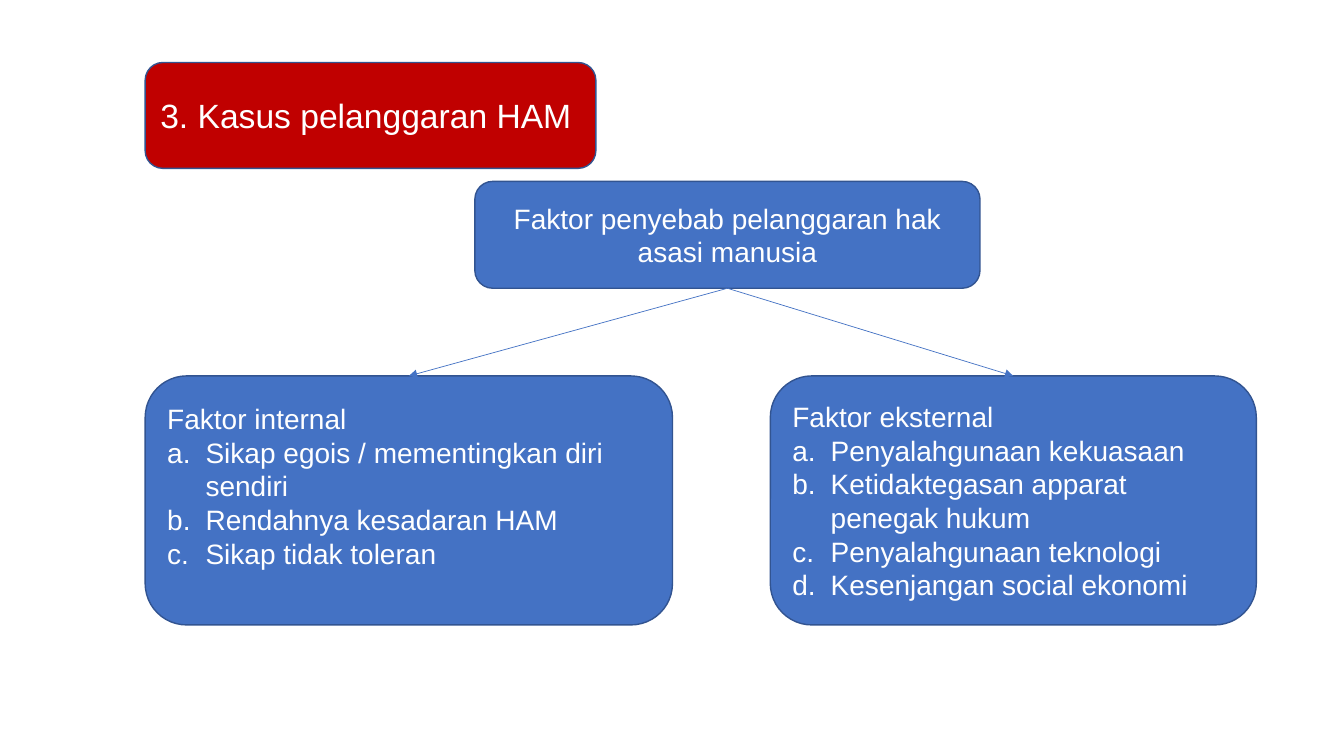
from lxml.etree import SubElement
from pptx import Presentation
from pptx.dml.color import RGBColor
from pptx.enum.shapes import MSO_CONNECTOR, MSO_SHAPE
from pptx.enum.text import MSO_ANCHOR, MSO_AUTO_SIZE, PP_ALIGN
from pptx.oxml.ns import qn
from pptx.util import Pt

PX = 9144  # EMU per px, 100 px to the inch
COLORS = {"red": "C00000", "blue": "4472C4", "edge": "325491", "text": "FFFFFF"}
FONT = "Arial"
INDENT = 38
TOP, BOTTOM = 0, 2  # connection sites of a rounded rectangle

TITLE_BOX = (144, 62, 447, 105)
HUB_BOX = (471, 180, 501, 106)
HUB_TEXT = "Faktor penyebab pelanggaran hak asasi manusia"
FACTORS = [
    # box, bottom inset, heading, lettered items
    ((144, 373, 523, 247), 34, "Faktor internal",
     ["Sikap egois / mementingkan diri sendiri",
      "Rendahnya kesadaran HAM",
      "Sikap tidak toleran"]),
    ((764, 373, 482, 247), 5, "Faktor eksternal",
     ["Penyalahgunaan kekuasaan",
      "Ketidaktegasan apparat penegak hukum",
      "Penyalahgunaan teknologi",
      "Kesenjangan social ekonomi"]),
]


def px(n):
    return int(n * PX)


def rgb(name):
    return RGBColor.from_string(COLORS[name])


def set_all(obj, fmt):
    for name, value in fmt.items():
        setattr(obj, name, value)


def add_box(s, box, fill):
    sp = s.shapes.add_shape(MSO_SHAPE.ROUNDED_RECTANGLE, *map(px, box))
    sp.shadow.inherit = False
    sp.fill.solid()
    sp.fill.fore_color.rgb = rgb(fill)
    sp.line.color.rgb = rgb("edge")
    sp.line.width = Pt(1)
    set_all(sp.text_frame, {"word_wrap": True, "vertical_anchor": MSO_ANCHOR.MIDDLE})
    return sp


def write(p, text, size, align=PP_ALIGN.LEFT):
    p.alignment = align
    r = p.add_run()
    r.text = text
    set_all(r.font, {"name": FONT, "size": Pt(size)})
    r.font.color.rgb = rgb("text")


def add_letter(p):
    pPr = p._p.get_or_add_pPr()
    pPr.set("marL", str(px(INDENT)))
    pPr.set("indent", str(px(-INDENT)))
    SubElement(pPr, qn("a:buFont"), typeface=FONT)
    SubElement(pPr, qn("a:buAutoNum"), type="alphaLcPeriod")


def add_title(s, text):
    add_box(s, TITLE_BOX, "red")
    title = s.shapes.title
    s.shapes._spTree.append(title._element)  # bring the text above its box
    set_all(title, dict(zip(("left", "top", "width", "height"), map(px, TITLE_BOX))))
    tf = title.text_frame
    set_all(tf, {"word_wrap": True, "auto_size": MSO_AUTO_SIZE.NONE,
                 "vertical_anchor": MSO_ANCHOR.MIDDLE, "margin_left": px(15)})
    write(tf.paragraphs[0], text, 24)


def add_factor(s, box, bottom, heading, items):
    sp = add_box(s, box, "blue")
    tf = sp.text_frame
    tf.margin_bottom = px(bottom)
    write(tf.paragraphs[0], heading, 20)
    for item in items:
        p = tf.add_paragraph()
        write(p, item, 20)
        add_letter(p)
    return sp


def add_arrow(s, source, target):
    c = s.shapes.add_connector(MSO_CONNECTOR.STRAIGHT, 0, 0, 0, 0)
    c.begin_connect(source, BOTTOM)
    c.end_connect(target, TOP)
    c.line.color.rgb = rgb("blue")
    c.line.width = Pt(0.5)
    SubElement(c.line._get_or_add_ln(), qn("a:tailEnd"), type="triangle")
    SubElement(c._element.spPr, qn("a:effectLst"))


def main():
    prs = Presentation()
    set_all(prs, {"slide_width": px(1333), "slide_height": px(750)})
    s = prs.slides.add_slide(prs.slide_layouts[5])

    # Title
    add_title(s, "3. Kasus pelanggaran HAM")

    # Hub
    hub = add_box(s, HUB_BOX, "blue")
    write(hub.text_frame.paragraphs[0], HUB_TEXT, 20, PP_ALIGN.CENTER)

    # Factors, each with an arrow from the hub
    for factor in FACTORS:
        add_arrow(s, hub, add_factor(s, *factor))

    prs.save("out.pptx")


if __name__ == "__main__":
    main()
